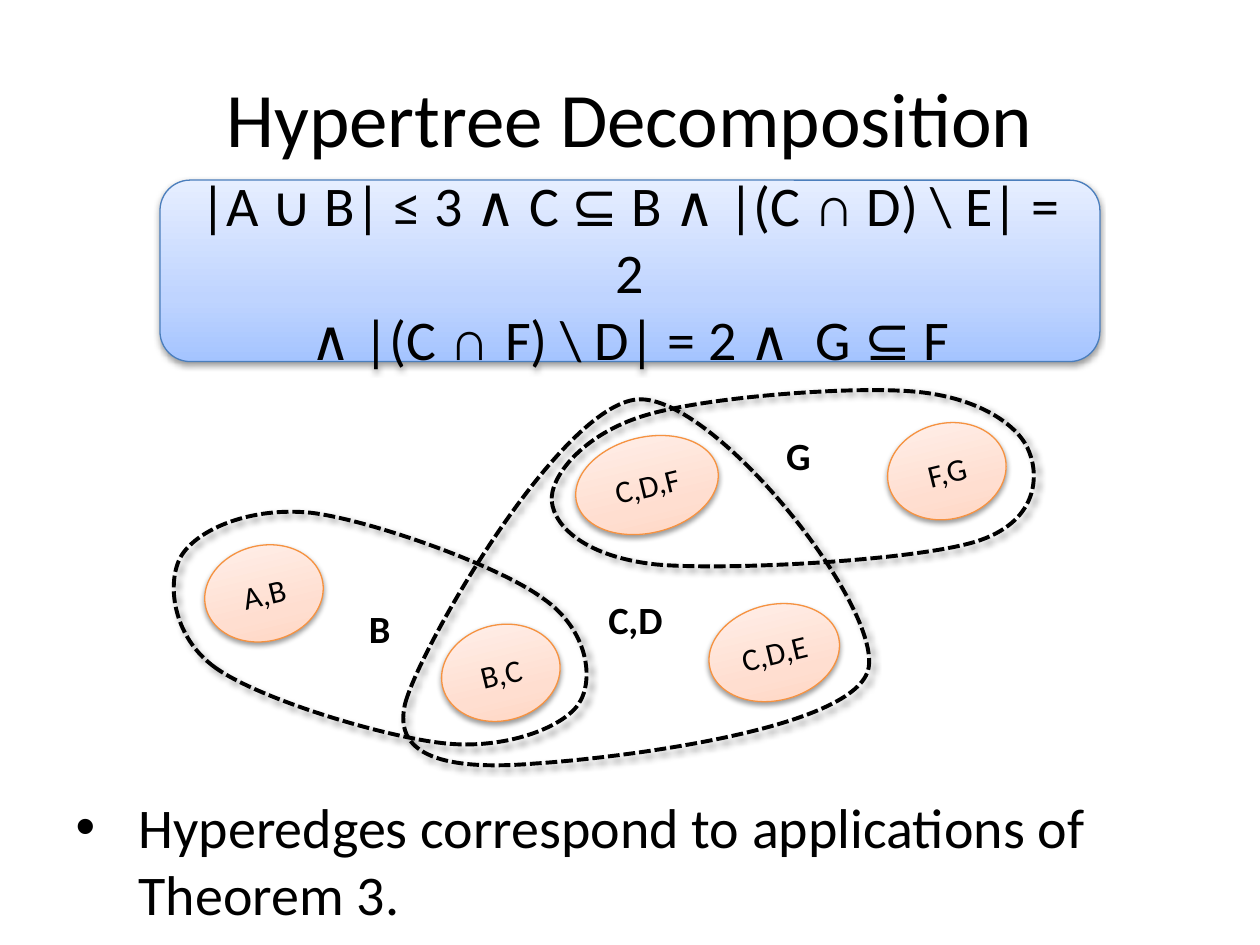
from copy import deepcopy
from dataclasses import dataclass

from lxml.etree import SubElement
from pptx import Presentation
from pptx.dml.color import RGBColor
from pptx.enum.dml import MSO_LINE
from pptx.enum.shapes import MSO_SHAPE
from pptx.enum.text import MSO_ANCHOR, MSO_AUTO_SIZE as AutoSize, PP_ALIGN
from pptx.oxml.ns import qn
from pptx.util import Emu, Inches, Pt


@dataclass(frozen=True)
class Theme:
    ink: str = "000000"
    node_fill: tuple = ("FFD2BD", "FFDED0", "FFF2ED")
    node_line: str = "F69240"
    formula_fill: tuple = ("A4C4FF", "BFD4FF", "E6EEFF")
    formula_line: str = "4B7EBC"
    font: str = "Calibri"
    symbol_font: str = "Arial"
    title_size: int = 44
    body_size: int = 32
    label_size: int = 22
    node_size: int = 18
    thin: float = 0.75
    thick: float = 2.25
    soft_shadow: tuple = (38, 3.1, 1.6, 90)
    edge_shadow: tuple = (40, 4, 3, 45)


THEME = Theme()
TILT = 346.3
NODE_HEIGHT = 0.76

NODES = [
    ("A,B", 1.62, 4.33, 0.95),
    ("B,C", 3.5, 4.96, 0.95),
    ("C,D,E", 5.62, 4.8, 1.05),
    ("C,D,F", 4.56, 3.47, 1.15),
    ("F,G", 7.04, 3.36, 0.95),
]

HYPEREDGES = [
    ("B", (2.83, 4.75, 0.38), (1.37, 4.06, 3.29, 1.85), (1.71, 5.3), [
        (1.36, 5.05, 1.32, 4.61, 1.44, 4.41),
        (1.57, 4.2, 1.99, 4.02, 2.47, 4.07),
        (2.95, 4.13, 3.96, 4.49, 4.31, 4.75),
        (4.67, 5, 4.72, 5.4, 4.59, 5.59),
        (4.46, 5.78, 4, 5.95, 3.53, 5.9),
        (3.05, 5.85, 2.06, 5.55, 1.71, 5.3),
    ]),
    ("C,D", (4.73, 4.68, 0.64), (3.2, 3.17, 3.7, 2.9), (3.22, 5.57), [
        (3.36, 5.09, 4.45, 3.22, 5.06, 3.17),
        (5.67, 3.13, 7.02, 4.84, 6.89, 5.32),
        (6.75, 5.8, 4.86, 6.02, 4.25, 6.06),
        (3.65, 6.11, 3.09, 6.05, 3.22, 5.57),
    ]),
    ("G", (6.14, 3.38, 0.4), (4.38, 3.1, 3.83, 1.39), (4.38, 3.98), [
        (4.4, 4.18, 4.65, 4.42, 5.21, 4.48),
        (5.77, 4.53, 7.24, 4.45, 7.74, 4.3),
        (8.23, 4.15, 8.25, 3.79, 8.17, 3.59),
        (8.1, 3.39, 7.79, 3.16, 7.28, 3.11),
        (6.77, 3.06, 5.59, 3.15, 5.11, 3.3),
        (4.62, 3.45, 4.36, 3.79, 4.38, 3.98),
    ]),
]

FORMULA = [
    [("|A ∪ B| ≤ 3 ∧ C ⊆ B ∧ |(C ", THEME.font),
     ("∩", THEME.symbol_font),
     (" D) \\ E| = 2", THEME.font)],
    [("∧ |(C ", THEME.font),
     ("∩ ", THEME.symbol_font),
     ("F) \\ D| = 2 ∧  G ⊆ F", THEME.font)],
]


def inches(*lengths):
    return [Inches(length) for length in lengths]


def add_run(paragraph, text, size, font=THEME.font, bold=False):
    run = paragraph.add_run()
    run.text = text
    run.font.name = font
    run.font.size = Pt(size)
    run.font.bold = bold
    run.font.color.rgb = RGBColor.from_string(THEME.ink)


def set_line(shape, color, width):
    shape.line.color.rgb = RGBColor.from_string(color)
    shape.line.width = Pt(width)


def set_shadow(shape, opacity, blur, distance, angle):
    shape.shadow.inherit = False
    effects = shape._element.spPr.find(qn("a:effectLst"))
    shadow = SubElement(effects, qn("a:outerShdw"), blurRad=str(Pt(blur)),
                        dist=str(Pt(distance)), dir=str(angle * 60000), rotWithShape="0")
    color = SubElement(shadow, qn("a:srgbClr"), val=THEME.ink)
    SubElement(color, qn("a:alpha"), val=str(opacity * 1000))


def set_gradient(shape, colors):
    shape.fill.gradient()
    shape.fill.gradient_angle = 90
    stop_list = shape._element.spPr.find(".//" + qn("a:gsLst"))
    stop_list.insert(1, deepcopy(stop_list[0]))
    for stop, color, position in zip(shape.fill.gradient_stops, colors, (0, 0.35, 1)):
        stop.color.rgb = RGBColor.from_string(color)
        stop.position = position


def add_panel(slide, kind, box, colors, line_color, lines, size):
    panel = slide.shapes.add_shape(kind, *inches(*box))
    set_gradient(panel, colors)
    set_line(panel, line_color, THEME.thin)
    set_shadow(panel, *THEME.soft_shadow)
    frame = panel.text_frame
    frame.vertical_anchor = MSO_ANCHOR.MIDDLE
    for index, line in enumerate(lines):
        paragraph = frame.add_paragraph() if index else frame.paragraphs[0]
        paragraph.alignment = PP_ALIGN.CENTER
        for text, font in line:
            add_run(paragraph, text, size, font)
    return panel


def add_node(slide, label, left, top, width):
    node = add_panel(slide, MSO_SHAPE.OVAL, (left, top, width, NODE_HEIGHT),
                     THEME.node_fill, THEME.node_line,
                     [[(label, THEME.font)]], THEME.node_size)
    node.rotation = TILT
    node.text_frame.word_wrap = False


def add_hyperedge(slide, box, start, curves):
    left, top, width, height = inches(*box)
    right, bottom = left + width, top + height
    builder = slide.shapes.build_freeform(left, top)
    builder.add_line_segments([(right, top), (right, bottom), (left, bottom)])
    edge = builder.convert_to_shape()
    outline = edge._element.spPr.find(".//" + qn("a:path"))
    for command in list(outline):
        outline.remove(command)
    for name, points in [("moveTo", start)] + [("cubicBezTo", curve) for curve in curves]:
        command = SubElement(outline, qn(f"a:{name}"))
        for x, y in zip(points[::2], points[1::2]):
            SubElement(command, qn("a:pt"), x=str(Emu(Inches(x) - left)),
                       y=str(Emu(Inches(y) - top)))
    SubElement(outline, qn("a:close"))
    edge.fill.background()
    set_line(edge, THEME.ink, THEME.thick)
    edge.line.dash_style = MSO_LINE.SQUARE_DOT
    set_shadow(edge, *THEME.edge_shadow)


def add_label(slide, text, left, top, width):
    frame = slide.shapes.add_textbox(*inches(left, top, width, 0.47)).text_frame
    frame.word_wrap = False
    frame.auto_size = AutoSize.SHAPE_TO_FIT_TEXT
    add_run(frame.paragraphs[0], text, THEME.label_size, bold=True)


def fill_placeholder(placeholder, box, text, size):
    placeholder.left, placeholder.top, placeholder.width, placeholder.height = inches(*box)
    placeholder.text_frame.auto_size = AutoSize.NONE
    paragraph = placeholder.text_frame.paragraphs[0]
    add_run(paragraph, text, size)
    return paragraph


def set_bullet(paragraph, indent):
    paragraph.space_before = Pt(0)
    properties = paragraph._p.get_or_add_pPr()
    properties.set("marL", str(Inches(indent)))
    properties.set("indent", str(Inches(-indent)))
    SubElement(properties, qn("a:buFont"), typeface=THEME.symbol_font)
    SubElement(properties, qn("a:buChar"), char="•")


def main():
    deck = Presentation()
    deck.slide_width, deck.slide_height = inches(10, 7.5)
    slide = deck.slides.add_slide(deck.slide_layouts[1])
    title, body = slide.placeholders
    fill_placeholder(title, (0.5, 0.3, 9, 1.25), "Hypertree Decomposition", THEME.title_size)
    for node in NODES:
        add_node(slide, *node)
    for label, label_place, box, start, curves in HYPEREDGES:
        add_hyperedge(slide, box, start, curves)
        add_label(slide, label, *label_place)
    add_panel(slide, MSO_SHAPE.ROUNDED_RECTANGLE, (1.27, 1.43, 7.46, 1.44),
              THEME.formula_fill, THEME.formula_line, FORMULA, THEME.body_size)
    remark = fill_placeholder(body, (0.5, 6.24, 8.8, 1.18),
                              "Hyperedges correspond to applications of Theorem 3.",
                              THEME.body_size)
    set_bullet(remark, 0.5)
    deck.save("out.pptx")


if __name__ == "__main__":
    main()
